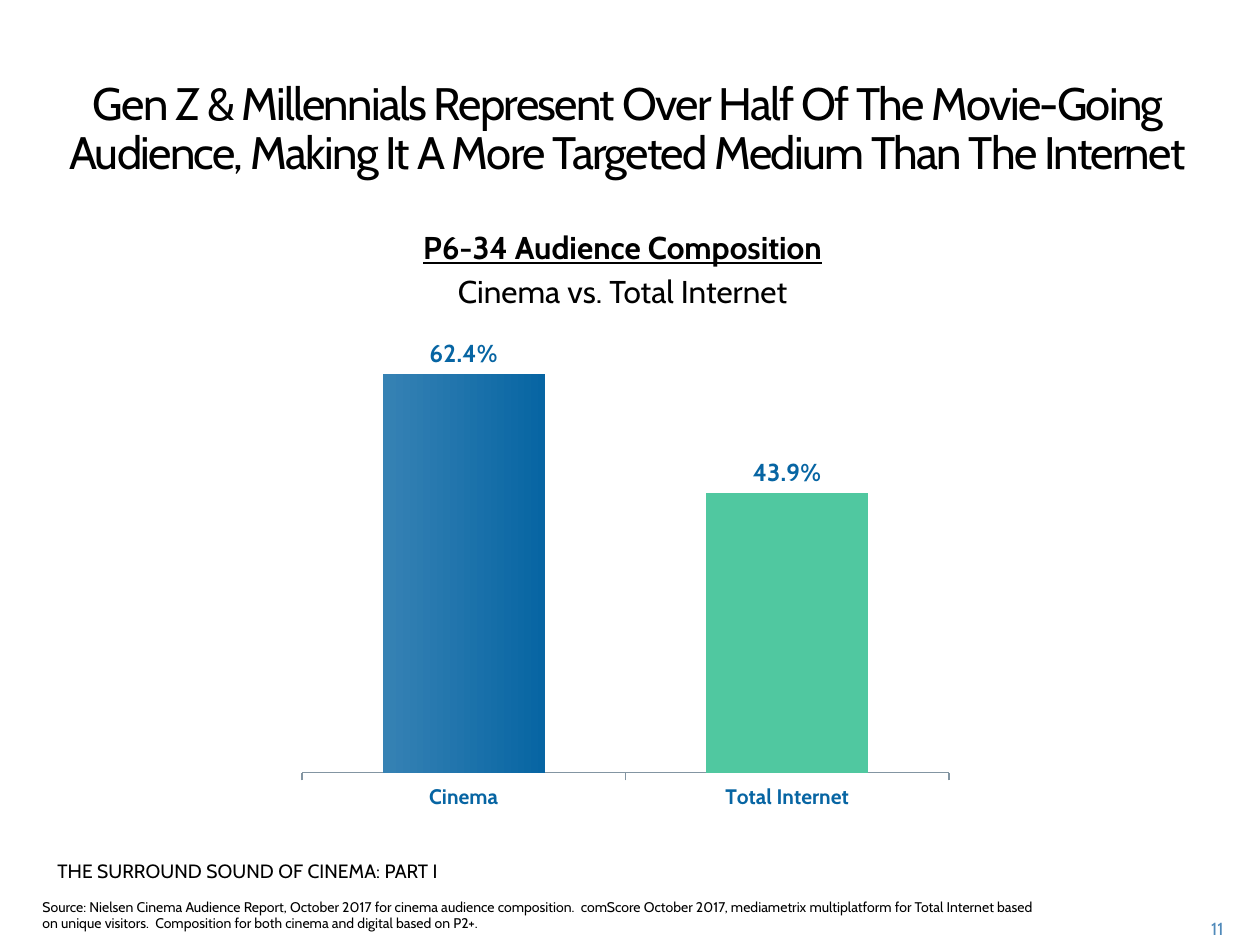
from pptx import Presentation
from pptx.chart.data import CategoryChartData
from pptx.dml.color import RGBColor
from pptx.enum.chart import XL_CHART_TYPE as ChartType, XL_LABEL_POSITION as LabelPosition
from pptx.enum.chart import XL_TICK_MARK as TickMark
from pptx.enum.text import MSO_ANCHOR as Anchor, PP_ALIGN as Align
from pptx.oxml import parse_xml
from pptx.oxml.ns import nsdecls
from pptx.util import Pt

PX = 914400 / 126
FONT = "Cabin"
COLORS = {
    "text": "000000", "number": "508ABA", "label": "0765A3", "axis": "8395A2",
    "cinema_light": "3682B4", "cinema_dark": "0765A3", "internet": "50C8A0",
}

# Each text: frame (left, top, width, height in px), format, paragraphs (wording, font values)
TEXTS = [
    ((14, 72, 1227, 115),
     {"align": Align.CENTER, "anchor": Anchor.MIDDLE, "leading": 28, "spacing": -100},
     [("Gen Z & Millennials Represent Over Half Of The Movie-Going Audience, "
       "Making It A More Targeted Medium Than The Internet", {"size": 26})]),
    ((16, 222, 1213, 50), {"align": Align.CENTER},
     [("P6-34 Audience Composition", {"size": 18, "bold": True, "underline": True}),
      ("Cinema vs. Total Internet", {"size": 18})]),
    ((45, 853, 462, 59), {},
     [("THE SURROUND SOUND OF CINEMA: PART I", {"size": 11})]),
    ((30, 892, 1032, 50), {},
     [("Source: Nielsen Cinema Audience Report, October 2017 for cinema audience "
       "composition.  comScore October 2017, mediametrix multiplatform for Total Internet "
       "based on unique visitors.  Composition for both cinema and digital based on P2+.",
       {"size": 8})]),
    ((1159, 912, 77, 32), {"align": Align.RIGHT},
     [("11", {"size": 10, "color": "number"})]),
]

AUDIENCE = {"Cinema": 0.624, "Total Internet": 0.439}
AXIS_TOP = 0.7
CHART_FRAME = (289, 315, 674, 505)
PLOT_FRAME = (302, 326, 647, 447)


def px(*lengths):
    return [round(length * PX) for length in lengths]


def color(name):
    return RGBColor.from_string(COLORS[name])


def set_font(font, values):
    values = {"name": FONT, "color": "text", **values}
    font.color.rgb = color(values.pop("color"))
    font.size = Pt(values.pop("size"))
    for key, value in values.items():
        setattr(font, key, value)


def add_text(page, frame, style, paragraphs):
    text = page.shapes.add_textbox(*px(*frame)).text_frame
    text.word_wrap = True
    text.vertical_anchor = style.get("anchor", Anchor.TOP)
    for index, (wording, values) in enumerate(paragraphs):
        para = text.add_paragraph() if index else text.paragraphs[0]
        para.alignment = style.get("align", Align.LEFT)
        if index:
            para.space_before = Pt(values["size"] * 0.2)
        if "leading" in style:
            para.line_spacing = Pt(style["leading"])
        span = para.add_run()
        span.text = wording
        set_font(span.font, values)
        if "spacing" in style:
            span.font._element.set("spc", str(style["spacing"]))


def place_plot(chart):
    """Fix the inner plot area at PLOT_FRAME, as fractions of the chart."""
    left, top, width, height = CHART_FRAME
    plot_left, plot_top, plot_width, plot_height = PLOT_FRAME
    shares = {
        "x": (plot_left - left) / width, "y": (plot_top - top) / height,
        "w": plot_width / width, "h": plot_height / height,
    }
    modes = "".join(f'<c:{key}Mode val="edge"/>' for key in "xy")
    sizes = "".join(f'<c:{key} val="{share:.4f}"/>' for key, share in shares.items())
    layout = parse_xml(
        f'<c:layout {nsdecls("c")}><c:manualLayout><c:layoutTarget val="inner"/>'
        f"{modes}{sizes}</c:manualLayout></c:layout>")
    plot_area = chart._chartSpace.chart.plotArea
    for old in plot_area.findall(layout.tag):
        plot_area.remove(old)
    plot_area.insert(0, layout)


def add_audience_chart(page):
    data = CategoryChartData(number_format="0.0%")
    data.categories = list(AUDIENCE)
    data.add_series("Series 1", list(AUDIENCE.values()))
    chart = page.shapes.add_chart(
        ChartType.COLUMN_CLUSTERED, *px(*CHART_FRAME), data).chart
    chart.has_legend = chart.has_title = False
    set_font(chart.font, {"size": 18})
    place_plot(chart)

    values = chart.value_axis
    values.visible = values.has_major_gridlines = False
    values.minimum_scale, values.maximum_scale = 0, AXIS_TOP

    categories = chart.category_axis
    categories.major_tick_mark = TickMark.OUTSIDE
    categories.format.line.color.rgb = color("axis")
    categories.format.line.width = Pt(0.75)
    set_font(categories.tick_labels.font, {"size": 12, "bold": True, "color": "label"})

    plot = chart.plots[0]
    plot.gap_width, plot.overlap, plot.vary_by_categories = 100, -20, False
    series = plot.series[0]
    fill = series.format.fill
    fill.gradient()
    fill.gradient_angle = 0
    for stop, position, name in zip(fill.gradient_stops, (0, 1), ("cinema_light", "cinema_dark")):
        stop.position = position
        stop.color.rgb = color(name)
    internet = series.points[1].format.fill
    internet.solid()
    internet.fore_color.rgb = color("internet")

    labels = series.data_labels
    labels.show_value = True
    labels.number_format, labels.number_format_is_linked = "0.0%", False
    labels.position = LabelPosition.OUTSIDE_END
    set_font(labels.font, {"size": 14, "bold": True, "color": "label"})


def main():
    deck = Presentation()
    deck.slide_width, deck.slide_height = px(1260, 945)
    page = deck.slides.add_slide(deck.slide_layouts[6])
    add_audience_chart(page)
    for frame, style, paragraphs in TEXTS:
        add_text(page, frame, style, paragraphs)
    deck.save("out.pptx")


if __name__ == "__main__":
    main()
